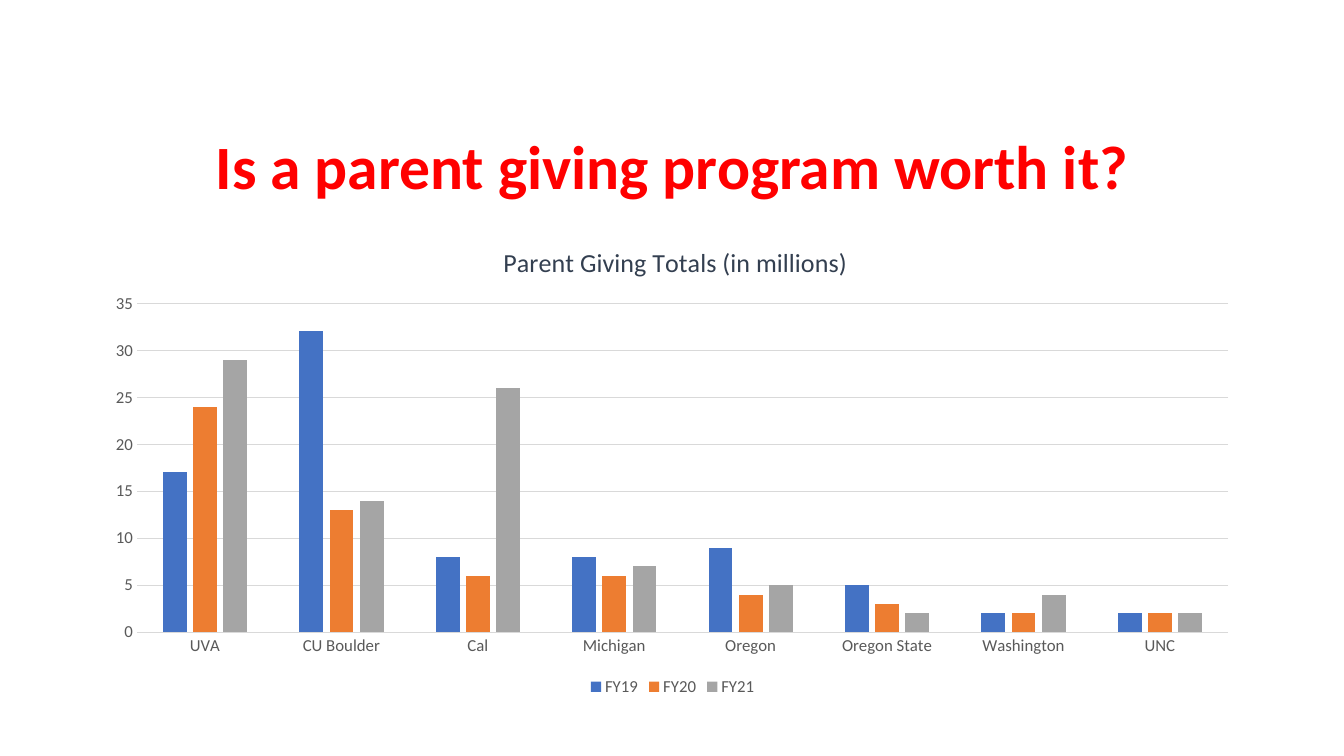
from lxml.etree import SubElement
from pptx import Presentation
from pptx.chart.data import CategoryChartData
from pptx.dml.color import RGBColor
from pptx.enum.chart import XL_CHART_TYPE, XL_LEGEND_POSITION, XL_TICK_MARK
from pptx.enum.text import MSO_ANCHOR, PP_ALIGN
from pptx.oxml.ns import qn
from pptx.util import Inches, Pt

COLORS = {"title": "FF0000", "heading": "333F50", "label": "595959", "rule": "D9D9D9",
          "FY19": "4472C4", "FY20": "ED7D31", "FY21": "A5A5A5"}
SCHOOLS = ["UVA", "CU Boulder", "Cal", "Michigan", "Oregon", "Oregon State", "Washington", "UNC"]
GIVING = {"FY19": [17, 32, 8, 8, 9, 5, 2, 2],
          "FY20": [24, 13, 6, 6, 4, 3, 2, 2],
          "FY21": [29, 14, 26, 7, 5, 2, 4, 2]}


def color(name):
    return RGBColor.from_string(COLORS[name])


def set_layout(element, **shares):
    """Place a chart part by shares of the chart's size."""
    layout = element.find(qn("c:layout"))
    if layout is None:
        layout = SubElement(element, qn("c:layout"))
        element.find(qn("c:tx")).addnext(layout)
    for child in list(layout):
        layout.remove(child)
    manual = SubElement(layout, qn("c:manualLayout"))
    if "w" in shares:
        SubElement(manual, qn("c:layoutTarget")).set("val", "inner")
    for axis in "xy":
        SubElement(manual, qn(f"c:{axis}Mode")).set("val", "edge")
    for key, share in shares.items():
        SubElement(manual, qn(f"c:{key}")).set("val", str(share))


class SlideBuilder:
    font_name = "Calibri"

    def __init__(self, presentation):
        self.width = presentation.slide_width
        self.height = presentation.slide_height
        self.slide = presentation.slides.add_slide(presentation.slide_layouts[6])

    def box(self, left, top, width, height):
        """Turn shares of the slide's size into lengths."""
        return (int(left * self.width), int(top * self.height),
                int(width * self.width), int(height * self.height))

    def style(self, font, size, color_name, bold=False):
        font.name = self.font_name
        font.size = Pt(size)
        font.bold = bold
        font.color.rgb = color(color_name)

    def title(self, text, *shares):
        frame = self.slide.shapes.add_textbox(*self.box(*shares)).text_frame
        frame.word_wrap = True
        frame.vertical_anchor = MSO_ANCHOR.MIDDLE
        paragraph = frame.paragraphs[0]
        paragraph.alignment = PP_ALIGN.CENTER
        paragraph.line_spacing = 0.9
        run = paragraph.add_run()
        run.text = text
        self.style(run.font, 44, "title", bold=True)

    def column_chart(self, heading, categories, series_values, *shares):
        data = CategoryChartData()
        data.categories = categories
        for name, values in series_values.items():
            data.add_series(name, values)
        chart = self.slide.shapes.add_chart(
            XL_CHART_TYPE.COLUMN_CLUSTERED, *self.box(*shares), data).chart
        chart.font.name = self.font_name
        chart.font.size = Pt(10)

        chart.has_title = True
        run = chart.chart_title.text_frame.paragraphs[0].add_run()
        run.text = heading
        self.style(run.font, 18.6, "heading")
        chart.chart_title.include_in_layout = False

        plot = chart.plots[0]
        plot.gap_width, plot.overlap = 219, -27
        plot.vary_by_categories = False
        for series in plot.series:
            series.format.fill.solid()
            series.format.fill.fore_color.rgb = color(series.name)

        for axis in (chart.category_axis, chart.value_axis):
            axis.major_tick_mark = axis.minor_tick_mark = XL_TICK_MARK.NONE
            self.style(axis.tick_labels.font, 12, "label")
        chart.value_axis.minimum_scale = 0
        chart.value_axis.maximum_scale = 35
        chart.value_axis.major_unit = 5
        chart.value_axis.format.line.fill.background()
        for rule in (chart.category_axis, chart.value_axis.major_gridlines):
            rule.format.line.color.rgb = color("rule")
            rule.format.line.width = Pt(0.75)

        chart.has_legend = True
        chart.legend.position = XL_LEGEND_POSITION.BOTTOM
        chart.legend.include_in_layout = False
        self.style(chart.legend.font, 12, "label")

        chart_element = chart.element.find(qn("c:chart"))
        set_layout(chart_element.find(qn("c:title")), x=0.35, y=0.04)
        plot_area = chart_element.find(qn("c:plotArea"))
        if plot_area.find(qn("c:layout")) is None:
            plot_area.insert(0, plot_area.makeelement(qn("c:layout")))
        set_layout(plot_area, x=0.038, y=0.172, w=0.941, h=0.685)


def main():
    presentation = Presentation()
    presentation.slide_width, presentation.slide_height = Inches(13.33), Inches(7.5)
    builder = SlideBuilder(presentation)
    left, width = 0.069, 0.863
    builder.title("Is a parent giving program worth it?", left, 0.128, width, 0.193)
    builder.column_chart("Parent Giving Totals (in millions)", SCHOOLS, GIVING,
                         left, 0.292, width, 0.635)
    presentation.save("out.pptx")


if __name__ == "__main__":
    main()
